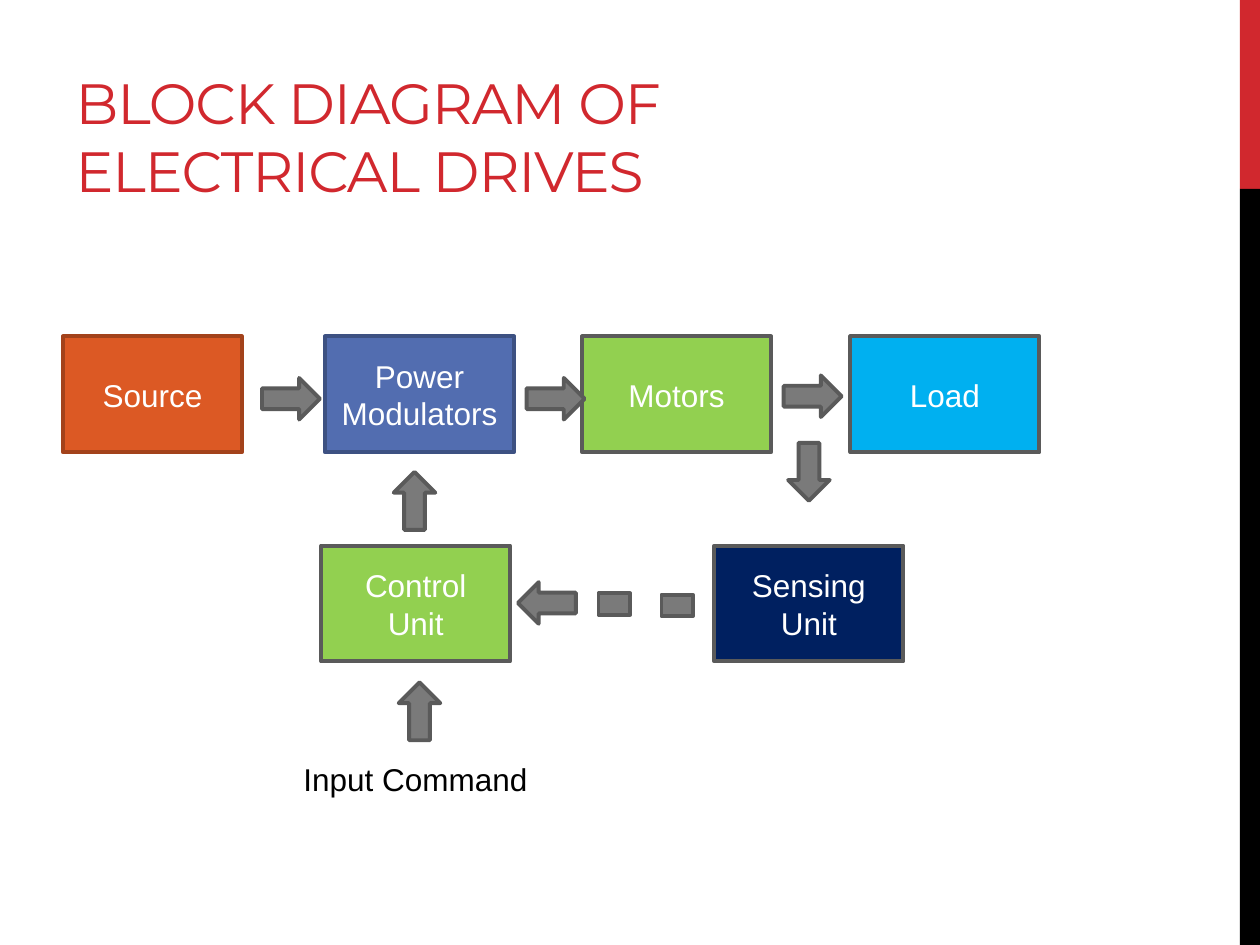
from pptx import Presentation, util as u
from pptx.dml.color import RGBColor
from pptx.enum import shapes, text

Inches, Pt = u.Inches, u.Pt
SHAPE = shapes.MSO_SHAPE


def color(value):
    return RGBColor.from_string(value)


class DiagramSlide:
    red, gray, edge = "D1282E", "7A7A7A", "5A5A5A"
    font, title_font = "Arial", "Montserrat"

    def __init__(self, prs):
        self.s = prs.slides.add_slide(prs.slide_layouts[5])

    def style_run(self, p, name, size, fill):
        r = p.runs[0]
        r.font.name = name
        r.font.size = Pt(size)
        r.font.color.rgb = color(fill)
        return r

    def title(self, wording, *at):
        sp = self.s.shapes.title
        sp.left, sp.top, sp.width, sp.height = map(Inches, at)
        tf = sp.text_frame
        tf.text = wording
        tf.word_wrap = True
        tf.auto_size = text.MSO_AUTO_SIZE.NONE
        tf.vertical_anchor = text.MSO_ANCHOR.BOTTOM
        p = tf.paragraphs[0]
        p.alignment = text.PP_ALIGN.LEFT
        r = self.style_run(p, self.title_font, 32.4, self.red)
        r.font._element.set("spc", "-60")

    def shape(self, kind, at, fill, line=None):
        sp = self.s.shapes.add_shape(kind, *map(Inches, at))
        sp.shadow.inherit = False
        sp.fill.solid()
        sp.fill.fore_color.rgb = color(fill)
        if line:
            sp.line.color.rgb = color(line)
            sp.line.width = Pt(2.25)
        else:
            sp.line.fill.background()
        return sp

    def block(self, wording, left, top, fill, line=edge, width=1.5):
        sp = self.shape(SHAPE.RECTANGLE, (left, top, width, 0.92), fill, line)
        tf = sp.text_frame
        tf.text = wording
        tf.word_wrap = True
        tf.vertical_anchor = text.MSO_ANCHOR.MIDDLE
        p = tf.paragraphs[0]
        p.alignment = text.PP_ALIGN.CENTER
        self.style_run(p, self.font, 18, "FFFFFF")

    def arrow(self, left, top, rotation=0):
        at = (left, top, 0.46, 0.33)
        sp = self.shape(SHAPE.RIGHT_ARROW, at, self.gray, self.edge)
        sp.rotation = rotation

    def dash(self, left, top):
        at = (left, top, 0.25, 0.17)
        self.shape(SHAPE.RECTANGLE, at, self.gray, self.edge)

    def label(self, wording, *at):
        tf = self.s.shapes.add_textbox(*map(Inches, at)).text_frame
        tf.text = wording
        tf.word_wrap = True
        self.style_run(tf.paragraphs[0], self.font, 18, "000000")


def main():
    prs = Presentation()
    prs.slide_width, prs.slide_height = Inches(10), Inches(7.5)
    slide = DiagramSlide(prs)

    slide.shape(SHAPE.RECTANGLE, (9.84, 0, 0.16, 1.5), slide.red)
    slide.shape(SHAPE.RECTANGLE, (9.84, 1.5, 0.16, 6), "000000")
    slide.title("BLOCK DIAGRAM OF ELECTRICAL DRIVES", 0.5, 0.17, 6.33, 1.5)

    power_row, control_row = 2.67, 4.33
    slide.block("Source", 0.5, power_row, "DC5924", "A3421B", 1.42)
    slide.block("Power Modulators", 2.58, power_row, "526DB0", "3D5182")
    slide.block("Motors", 4.62, power_row, "92D050")
    slide.block("Load", 6.75, power_row, "00B0F0")
    slide.block("Sensing Unit", 5.67, control_row, "002060")
    slide.block("Control Unit", 2.55, control_row, "92D050")

    down, back, up = 90, 180, 270
    for left, top, rotation in [
        (2.08, 3, 0), (4.18, 3, 0), (6.22, 2.98, 0),
        (3.06, 3.81, up), (6.19, 3.58, down),
        (4.11, 4.62, back), (3.1, 5.48, up),
    ]:
        slide.arrow(left, top, rotation)

    slide.dash(4.75, 4.71)
    slide.dash(5.25, 4.72)
    slide.label("Input Command", 2.31, 5.98, 2.19, 0.4)

    prs.save("out.pptx")


if __name__ == "__main__":
    main()
